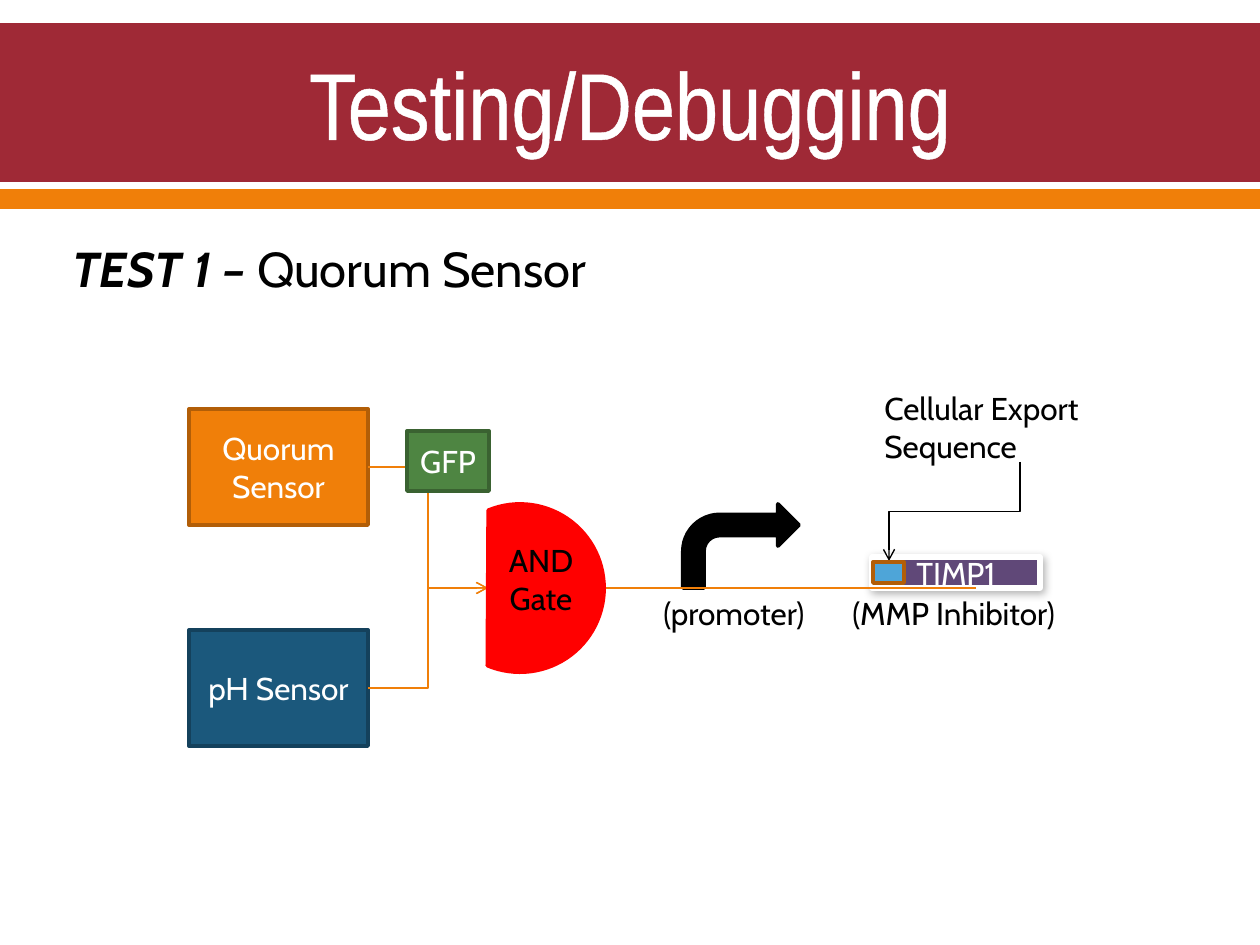
from lxml.etree import SubElement
from pptx import Presentation
from pptx.dml.color import RGBColor
from pptx.enum.shapes import MSO_CONNECTOR, MSO_SHAPE
from pptx.enum.text import MSO_ANCHOR, MSO_AUTO_SIZE, PP_ALIGN
from pptx.oxml import parse_xml
from pptx.oxml.ns import nsdecls, qn
from pptx.util import Pt

PX = 914400 / 126  # EMU per px

WHITE = RGBColor(0xFF, 0xFF, 0xFF)
BLACK = RGBColor(0x00, 0x00, 0x00)
CRIMSON = RGBColor(0x9F, 0x29, 0x36)
ORANGE = RGBColor(0xF0, 0x7F, 0x09)
DARK_ORANGE = RGBColor(0xB2, 0x5E, 0x07)
NAVY = RGBColor(0x1B, 0x58, 0x7C)
DARK_NAVY = RGBColor(0x14, 0x41, 0x5C)
PURPLE = RGBColor(0x60, 0x48, 0x78)
GREEN = RGBColor(0x4E, 0x85, 0x42)
DARK_GREEN = RGBColor(0x3A, 0x62, 0x31)
SKY = RGBColor(0x4E, 0xA5, 0xD8)
RED = RGBColor(0xFF, 0x00, 0x00)

prs = Presentation()
prs.slide_width = round(1260 * PX)
prs.slide_height = round(945 * PX)
slide = prs.slides.add_slide(prs.slide_layouts[5])
shapes = slide.shapes


def add_block(kind, box, fill, line=None, label="", width=2.22):
    block = shapes.add_shape(kind, *(round(v * PX) for v in box))
    block.shadow.inherit = False
    block.fill.solid()
    block.fill.fore_color.rgb = fill
    if line is None:
        block.line.fill.background()
    else:
        block.line.color.rgb = line
        block.line.width = Pt(width)
    if label:
        frame = block.text_frame
        frame.word_wrap = True
        frame.vertical_anchor = MSO_ANCHOR.MIDDLE
        frame.paragraphs[0].alignment = PP_ALIGN.CENTER
        run = frame.paragraphs[0].add_run()
        run.text = label
        run.font.name, run.font.size = "Cabin", Pt(18)
        run.font.color.rgb = WHITE
    return block


def add_wire(kind, ends, color, arrow=False):
    wire = shapes.add_connector(kind, *(round(v * PX) for v in ends))
    wire.line.color.rgb = color
    wire.line.width = Pt(0.79)
    if arrow:
        SubElement(wire.line._get_or_add_ln(), qn("a:tailEnd"), type="arrow")
    SubElement(wire._element.spPr, qn("a:effectLst"))
    return wire


# Header bands and title
add_block(MSO_SHAPE.RECTANGLE, (0, 23, 1260, 159), CRIMSON)
add_block(MSO_SHAPE.RECTANGLE, (0, 189, 1260, 20), ORANGE)

title = shapes.title
title.left, title.top, title.width, title.height = (
    round(v * PX) for v in (63, 25, 1134, 154))
shapes._spTree.append(title._element)  # in front of the bands
title.text_frame.vertical_anchor = MSO_ANCHOR.MIDDLE
heading = title.text_frame.paragraphs[0]
heading.alignment = PP_ALIGN.CENTER
run = heading.add_run()
run.text = "Testing/Debugging"
run.font.name, run.font.size = "Arial Narrow", Pt(54)
run.font.color.rgb = WHITE
run.font._element.insert(0, parse_xml(
    f'<a:ln {nsdecls("a")} w="13970"><a:solidFill>'
    '<a:srgbClr val="FFFFFF"/></a:solidFill></a:ln>'))

# Sensors and TIMP1 gene
add_block(MSO_SHAPE.RECTANGLE, (189, 409, 179, 116), ORANGE, DARK_ORANGE, "Quorum Sensor")
add_block(MSO_SHAPE.RECTANGLE, (189, 630, 179, 116), NAVY, DARK_NAVY, "pH Sensor")
timp1 = add_block(MSO_SHAPE.RECTANGLE, (872, 557, 168, 31), PURPLE, WHITE, "TIMP1", 3)
timp1_effects = timp1._element.spPr.find(qn("a:effectLst"))
timp1_effects.append(parse_xml(
    f'<a:outerShdw {nsdecls("a")} blurRad="63500" dist="25400" dir="3600000" rotWithShape="0">'
    '<a:srgbClr val="000000"><a:alpha val="30000"/></a:srgbClr></a:outerShdw>'))

# Promoter arrow
add_block(MSO_SHAPE.BENT_ARROW, (683, 504, 116, 84), BLACK, BLACK)

# Wires into the gate and along the gene
for sensor_y in (467, 688):
    add_wire(MSO_CONNECTOR.ELBOW, (368, sensor_y, 488, 588), ORANGE, arrow=True)
for start, end in ((693, 976), (488, 693)):
    add_wire(MSO_CONNECTOR.STRAIGHT, (start, 588, end, 588), ORANGE)

# AND gate and GFP reporter
gate = add_block(MSO_SHAPE.CHORD, (436, 504, 168, 168), RED, RED)
gate.rotation = 202.8
add_block(MSO_SHAPE.RECTANGLE, (407, 431, 82, 60), GREEN, DARK_GREEN, "GFP")

# Export sequence: a quarter turn makes the elbow leave downwards
export_wire = add_wire(MSO_CONNECTOR.ELBOW, (905, 446, 1004, 577), BLACK, arrow=True)
export_wire._element.spPr.find(qn("a:xfrm")).set("rot", "5400000")
add_block(MSO_SHAPE.RECTANGLE, (873, 562, 31, 21), SKY, DARK_ORANGE)

# Captions: box, size, alignment, paragraphs of (text, emphasis) runs
captions = [
    ((60, 232, 769, 72), 28, PP_ALIGN.LEFT, [[("TEST 1 – ", True), ("Quorum Sensor", False)]]),
    ((872, 383, 325, 89), 18, PP_ALIGN.LEFT, [[("Cellular Export Sequence", False)]]),
    ((494, 535, 94, 89), 18, PP_ALIGN.CENTER, [[("AND", False)], [("Gate", False)]]),
    ((651, 588, 184, 50), 18, PP_ALIGN.LEFT, [[("(promoter)", False)]]),
    ((840, 588, 284, 50), 18, PP_ALIGN.LEFT, [[("(MMP Inhibitor)", False)]]),
]
for box, size, alignment, lines in captions:
    frame = shapes.add_textbox(*(round(v * PX) for v in box)).text_frame
    frame.word_wrap = True
    frame.auto_size = MSO_AUTO_SIZE.SHAPE_TO_FIT_TEXT
    for index, line in enumerate(lines):
        paragraph = frame.add_paragraph() if index else frame.paragraphs[0]
        paragraph.alignment = alignment
        for text, emphasis in line:
            run = paragraph.add_run()
            run.text = text
            run.font.name, run.font.size = "Cabin", Pt(size)
            run.font.bold = run.font.italic = emphasis
            run.font.color.rgb = BLACK

prs.save("out.pptx")
